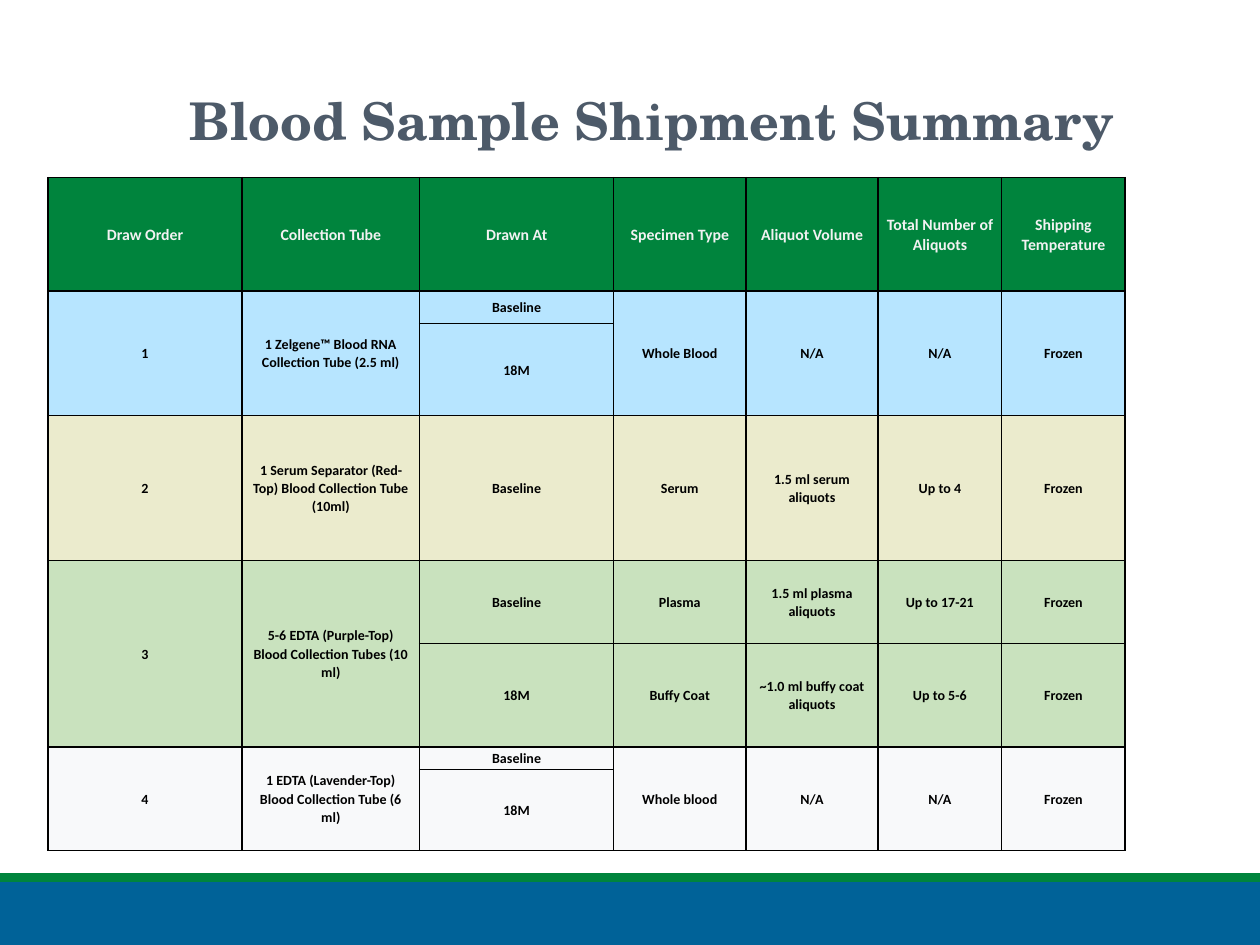
from dataclasses import dataclass

from lxml.etree import SubElement as Sub
from pptx import Presentation
from pptx.dml.color import RGBColor as RGB
from pptx.enum.shapes import MSO_SHAPE as Shape
from pptx.enum.text import MSO_ANCHOR as Anchor, PP_ALIGN as Align
from pptx.oxml.ns import qn
from pptx.util import Pt


@dataclass(frozen=True)
class Theme:
    blue: str = "006298"
    green: str = "00843D"
    slate: str = "4D5A69"
    pale: str = "F2F2F2"
    ink: str = "000000"
    serif: str = "TeX Gyre Schola"
    sans: str = "Calibri"
    title: float = 29.7
    head: float = 9
    body: float = 8


HEADS = ["Draw Order", "Collection Tube", "Drawn At", "Specimen Type",
         "Aliquot Volume", "Total Number of Aliquots", "Shipping Temperature"]

# A None cell joins the cell above it.
DRAWS = [
    ("B7E5FF", ["1", "1 Zelgene™ Blood RNA Collection Tube (2.5 ml)", "Baseline",
                "Whole Blood", "N/A", "N/A", "Frozen"]),
    ("B7E5FF", [None, None, "18M", None, None, None, None]),
    ("EBEBCD", ["2", "1 Serum Separator (Red-Top) Blood Collection Tube (10ml)",
                "Baseline", "Serum", "1.5 ml serum aliquots", "Up to 4", "Frozen"]),
    ("C9E2BE", ["3", "5-6 EDTA (Purple-Top) Blood Collection Tubes (10 ml)",
                "Baseline", "Plasma", "1.5 ml plasma aliquots", "Up to 17-21", "Frozen"]),
    ("C9E2BE", [None, None, "18M", "Buffy Coat", "~1.0 ml buffy coat aliquots",
                "Up to 5-6", "Frozen"]),
    ("F8F9FA", ["4", "1 EDTA (Lavender-Top) Blood Collection Tube (6 ml)",
                "Baseline", "Whole blood", "N/A", "N/A", "Frozen"]),
    ("F8F9FA", [None, None, "18M", None, None, None, None]),
]
COLS = [110.9, 101.5, 110.9, 75.6, 75.6, 70.6, 70.6]
ROWS = [64.8, 18.7, 52.6, 82.8, 47.5, 59, 13, 46.1]


class Page:
    def __init__(self, slide, theme):
        self.slide = slide
        self.theme = theme

    def bar(self, top, height, color):
        box = self.slide.shapes.add_shape(
            Shape.RECTANGLE, 0, Pt(top), Pt(720), Pt(height))
        box.shadow.inherit = False
        box.fill.solid()
        box.fill.fore_color.rgb = RGB.from_string(color)
        box.line.fill.background()

    def label(self, frame, text, font, size, color, gap):
        frame.text = text
        para = frame.paragraphs[0]
        para.alignment = Align.CENTER
        para.line_spacing = gap
        for run in para.runs:
            run.font.name = font
            run.font.size = Pt(size)
            run.font.bold = True
            run.font.color.rgb = RGB.from_string(color)
        # The end mark sets the height of an empty line.
        end = para._p.get_or_add_endParaRPr()
        end.set("sz", str(round(size * 100)))
        return para

    def title(self, text, left, top, width, height):
        box = self.slide.shapes.add_textbox(Pt(left), Pt(top), Pt(width), Pt(height))
        frame = box.text_frame
        frame.word_wrap = True
        frame.vertical_anchor = Anchor.MIDDLE
        look = self.theme
        self.label(frame, text, look.serif, look.title, look.slate, 0.9)

    def edge(self, cell):
        """Rule all four sides of a cell."""
        props = cell._tc.get_or_add_tcPr()
        for side in ("lnL", "lnR", "lnT", "lnB"):
            line = Sub(props, qn(f"a:{side}"), w=str(Pt(1)))
            fill = Sub(line, qn("a:solidFill"))
            Sub(fill, qn("a:srgbClr"), val=self.theme.ink)

    def cell(self, cell, text, size, color, fill):
        cell.margin_left = cell.margin_right = Pt(4.3)
        cell.margin_top = cell.margin_bottom = 0
        cell.vertical_anchor = Anchor.MIDDLE
        para = self.label(cell.text_frame, text or "", self.theme.sans, size, color, 1.06)
        para.space_after = Pt(8)
        self.edge(cell)
        cell.fill.solid()
        cell.fill.fore_color.rgb = RGB.from_string(fill)

    def table(self, left, top, cols, rows, heads, draws):
        grid = self.slide.shapes.add_table(
            len(rows), len(cols), Pt(left), Pt(top), Pt(sum(cols)), Pt(sum(rows))).table
        for col, width in zip(grid.columns, cols):
            col.width = Pt(width)
        for row, height in zip(grid.rows, rows):
            row.height = Pt(height)
        look = self.theme
        for c, text in enumerate(heads):
            self.cell(grid.cell(0, c), text, look.head, look.pale, look.green)
        for r, (fill, texts) in enumerate(draws, 1):
            for c, text in enumerate(texts):
                self.cell(grid.cell(r, c), text, look.body, look.ink, fill)
                if text is None:
                    grid.cell(r - 1, c).merge(grid.cell(r, c))


def main():
    deck = Presentation()
    deck.slide_width, deck.slide_height = Pt(720), Pt(540)
    theme = Theme()
    page = Page(deck.slides.add_slide(deck.slide_layouts[6]), theme)
    page.bar(504, 36, theme.blue)
    page.bar(499, 5, theme.green)
    page.title("Blood Sample Shipment Summary\v", 62.6, 62.6, 620.6, 51.8)
    page.table(27.4, 101.5, COLS, ROWS, HEADS, DRAWS)
    deck.save("out.pptx")


if __name__ == "__main__":
    main()
